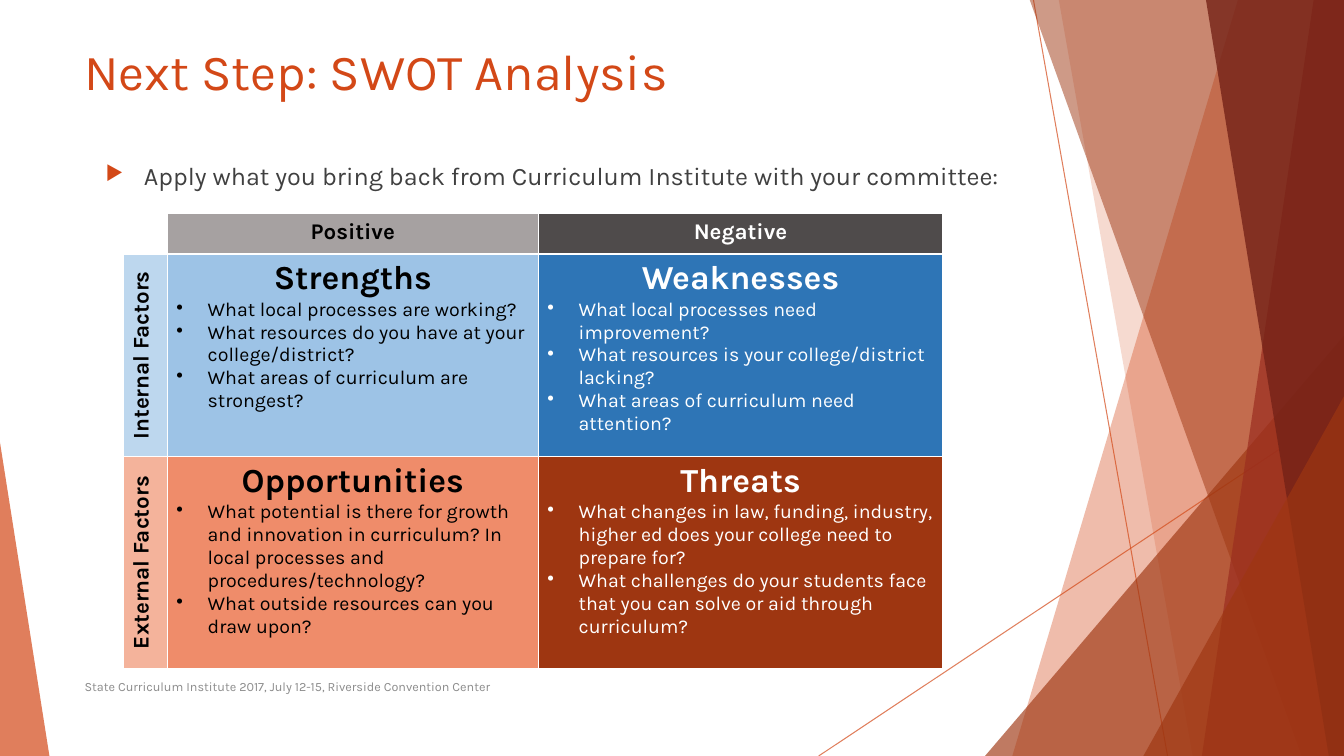
"""Build the SWOT analysis slide with its faceted side decoration."""
from lxml import etree
from pptx import Presentation
from pptx.dml.color import RGBColor
from pptx.enum import shapes, text
from pptx.oxml import ns, xmlchemy
from pptx.util import Inches, Pt

ORANGE = RGBColor(0xD3, 0x48, 0x17)
RUST = RGBColor(0x9E, 0x36, 0x11)
BRICK = RGBColor(0x9B, 0x2D, 0x1F)
MAROON = RGBColor(0x74, 0x22, 0x17)
CHARCOAL = RGBColor(0x40, 0x40, 0x40)
FOOTER_GRAY = RGBColor(0x8C, 0x8C, 0x8C)
BLACK = RGBColor(0, 0, 0)
WHITE = RGBColor(0xFF, 0xFF, 0xFF)
LIGHT_GRAY = RGBColor(0xA6, 0xA1, 0xA1)
DARK_GRAY = RGBColor(0x4F, 0x4B, 0x4B)
PALE_BLUE = RGBColor(0xBD, 0xD7, 0xEE)
SKY_BLUE = RGBColor(0x9D, 0xC3, 0xE6)
DEEP_BLUE = RGBColor(0x2E, 0x75, 0xB6)
PEACH = RGBColor(0xF4, 0xB3, 0x9B)
CORAL = RGBColor(0xEF, 0x8C, 0x6A)


def write(frame, words, size=14, color=BLACK, bold=False, align=text.PP_ALIGN.LEFT,
          bullet=None, bullet_color=None, bullet_scale=100, indent=0, before=0):
    """Add one formatted paragraph, filling the first one when it is empty."""
    paragraph = frame.paragraphs[0]
    if paragraph.runs:
        paragraph = frame.add_paragraph()
    paragraph.alignment = align
    paragraph.space_before = Pt(before)
    run = paragraph.add_run()
    run.text = words
    run.font.name = "Karla"
    run.font.size = Pt(size)
    run.font.bold = bold
    run.font.color.rgb = color
    if bullet:
        properties = paragraph._p.get_or_add_pPr()
        properties.set("marL", str(Inches(indent)))
        properties.set("indent", str(-Inches(indent)))
        marker = etree.SubElement(properties, ns.qn("a:buClr"))
        etree.SubElement(marker, ns.qn("a:srgbClr"), val=str(bullet_color or color))
        etree.SubElement(properties, ns.qn("a:buSzPct"), val=str(bullet_scale * 1000))
        etree.SubElement(properties, ns.qn("a:buChar"), char=bullet)


def tint(paint, color, opacity):
    """Apply a solid colour with the given opacity percentage."""
    paint.solid()
    paint.fore_color.rgb = color
    for value in paint._xPr.iter(ns.qn("a:srgbClr")):
        etree.SubElement(value, ns.qn("a:alpha"), val=str(opacity * 1000))


deck = Presentation()
deck.slide_width, deck.slide_height = Inches(13.33), Inches(7.5)
slide = deck.slides.add_slide(deck.slide_layouts[6])

for ray in [(10.25, 0, 11.58, 7.5), (13.33, 4.03, 8.12, 7.5)]:
    line = slide.shapes.add_connector(shapes.MSO_CONNECTOR.STRAIGHT, *map(Inches, ray))
    line.line.width = Pt(0.75)
    tint(line.line.fill, ORANGE, 70)
    etree.SubElement(line._element.spPr, ns.qn("a:effectLst"))

# Facets: top-left x, bottom-left x; triangles: left, top, width, height, apex
facets = [
    ("band", (12.28, 10.04), ORANGE, 36),
    ("band", (10.5, 11.83), ORANGE, 20),
    ("triangle", (9.77, 3.33, 3.56, 4.17, 1), RUST, 66),
    ("band", (10.21, 12.91), RUST, 50),
    ("band", (13.03, 11.92), BRICK, 70),
    ("band", (11.96, 13.18), MAROON, 80),
    ("triangle", (11.34, 3.93, 1.99, 3.57, 1), RUST, 66),
    ("triangle", (0, 4.39, 0.49, 3.11, 0), ORANGE, 70),
]
for kind, place, color, opacity in facets:
    if kind == "band":
        top_x, bottom_x = place
        outline = slide.shapes.build_freeform(Inches(top_x), Inches(-0.01))
        corners = [(13.33, -0.01), (13.33, 7.5), (bottom_x, 7.5)]
        outline.add_line_segments([(Inches(x), Inches(y)) for x, y in corners])
        facet = outline.convert_to_shape()
    else:
        facet = slide.shapes.add_shape(
            shapes.MSO_SHAPE.ISOSCELES_TRIANGLE, *map(Inches, place[:4]))
        facet.adjustments[0] = place[4]
    facet.shadow.inherit = False
    facet.line.fill.background()
    tint(facet.fill, color, opacity)

labels = [
    ((0.74, 0.35, 9.4, 1.44), "Next Step: SWOT Analysis", text.MSO_ANCHOR.TOP,
     dict(size=36, color=ORANGE)),
    ((0.95, 1.54, 9.4, 0.51),
     "Apply what you bring back from Curriculum Institute with your committee:",
     text.MSO_ANCHOR.TOP,
     dict(size=18, color=CHARCOAL, bullet="▶", bullet_color=ORANGE,
          bullet_scale=80, indent=0.38, before=10)),
    ((0.74, 6.61, 6.89, 0.4),
     "State Curriculum Institute 2017, July 12-15, Riverside Convention Center",
     text.MSO_ANCHOR.MIDDLE, dict(size=9, color=FOOTER_GRAY)),
]
for place, words, anchor, style in labels:
    frame = slide.shapes.add_textbox(*map(Inches, place)).text_frame
    frame.word_wrap = True
    frame.vertical_anchor = anchor
    write(frame, words, **style)

swot = [
    [None, ("Positive", [], BLACK, LIGHT_GRAY), ("Negative", [], WHITE, DARK_GRAY)],
    [("Internal Factors", [], BLACK, PALE_BLUE),
     ("Strengths", ["What local processes are working?",
                    "What resources do you have at your college/district?",
                    "What areas of curriculum are strongest?"], BLACK, SKY_BLUE),
     ("Weaknesses", ["What local processes need improvement?",
                     "What resources is your college/district lacking?",
                     "What areas of curriculum need attention?"], WHITE, DEEP_BLUE)],
    [("External Factors", [], BLACK, PEACH),
     ("Opportunities", ["What potential is there for growth and innovation in curriculum? "
                        "In local processes and procedures/technology?",
                        "What outside resources can you draw upon?"], BLACK, CORAL),
     ("Threats", ["What changes in law, funding, industry, higher ed does your college "
                  "need to prepare for?",
                  "What challenges do your students face that you can solve or aid "
                  "through curriculum?"], WHITE, RUST)],
]
matrix = slide.shapes.add_table(
    3, 3, Inches(1.22), Inches(2.12), Inches(8.13), Inches(4.49)).table
matrix.first_row = matrix.horz_banding = False
for column, width in zip(matrix.columns, [0.44, 3.68, 4.01]):
    column.width = Inches(width)
for row, height in zip(matrix.rows, [0.38, 2.01, 2.1]):
    row.height = Inches(height)

for row_index, entries in enumerate(swot):
    for column_index, entry in enumerate(entries):
        cell = matrix.cell(row_index, column_index)
        cell.margin_left = cell.margin_right = Inches(0.09)
        cell.margin_top = cell.margin_bottom = Inches(0.05)
        properties = cell._tc.get_or_add_tcPr()
        for side in ("lnL", "lnR", "lnT", "lnB"):
            border = etree.SubElement(properties, ns.qn(f"a:{side}"), w=str(Pt(1)))
            paint = etree.SubElement(border, ns.qn("a:solidFill"))
            etree.SubElement(paint, ns.qn("a:srgbClr"), val=str(WHITE))
        if entry is None:
            cell.fill.background()
            continue
        heading, questions, color, background = entry
        cell.fill.solid()
        cell.fill.fore_color.rgb = background
        if column_index == 0:
            properties.set("vert", "vert270")
        write(cell.text_frame, heading, size=24 if questions else 16, color=color,
              bold=True, align=text.PP_ALIGN.CENTER)
        for question in questions:
            write(cell.text_frame, question, color=color, bullet="•", indent=0.31)

deck.save("out.pptx")
